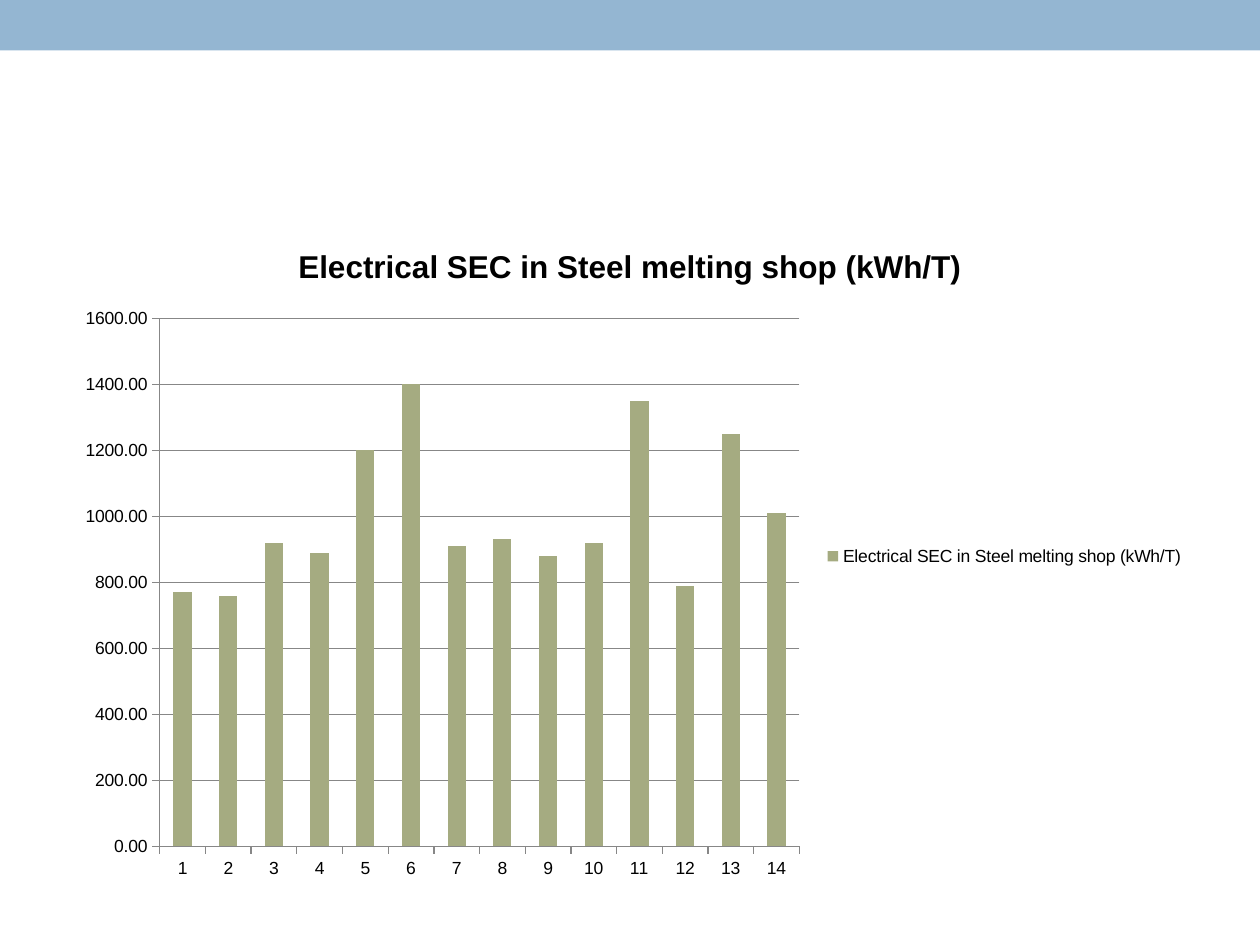
from pptx import Presentation
from pptx.chart.data import CategoryChartData
from pptx.dml.color import RGBColor
from pptx.enum import chart as ch, shapes
from pptx.util import Inches, Pt

NAME = "Electrical SEC in Steel melting shop (kWh/T)"
SEC = [770, 760, 920, 890, 1200, 1400, 910, 930, 880, 920, 1350, 790, 1250, 1010]
GREY = "878787"


def rgb(value):
    return RGBColor.from_string(value)


def set_font(font, size, bold=False):
    font.name, font.size, font.bold = "Arial", Pt(size), bold
    font.color.rgb = rgb("000000")


def set_line(line, color):
    line.color.rgb = rgb(color)
    line.width = Pt(0.75)


def add_band(s, x, y, w, h, color):
    sp = s.shapes.add_shape(shapes.MSO_SHAPE.RECTANGLE,
                            Inches(x), Inches(y), Inches(w), Inches(h))
    sp.shadow.inherit = False
    sp.fill.solid()
    sp.fill.fore_color.rgb = rgb(color)
    sp.line.fill.background()


def add_column_chart(s, x, y, w, h, color):
    data = CategoryChartData(number_format="0.00")
    data.categories = [str(i) for i in range(1, len(SEC) + 1)]
    data.add_series(NAME, SEC)
    chart = s.shapes.add_chart(ch.XL_CHART_TYPE.COLUMN_CLUSTERED, Inches(x), Inches(y),
                               Inches(w), Inches(h), data).chart
    set_font(chart.font, 10)

    # Title and legend
    chart.has_title = True
    tf = chart.chart_title.text_frame
    tf.text = NAME
    set_font(tf.paragraphs[0].runs[0].font, 18, bold=True)
    chart.chart_title.include_in_layout = False
    chart.has_legend = True
    chart.legend.position = ch.XL_LEGEND_POSITION.RIGHT
    chart.legend.include_in_layout = False

    # Axes
    for axis in (chart.category_axis, chart.value_axis):
        axis.major_tick_mark = ch.XL_TICK_MARK.OUTSIDE
        set_line(axis.format.line, GREY)
    axis = chart.value_axis
    axis.minimum_scale, axis.maximum_scale, axis.major_unit = 0, 1600, 200
    axis.has_major_gridlines = True
    set_line(axis.major_gridlines.format.line, GREY)
    axis.tick_labels.number_format = "0.00"
    axis.tick_labels.number_format_is_linked = False

    # Columns
    plot = chart.plots[0]
    plot.vary_by_categories = False
    plot.gap_width = 150
    fill = plot.series[0].format.fill
    fill.solid()
    fill.fore_color.rgb = rgb(color)


def main():
    prs = Presentation()
    prs.slide_width, prs.slide_height = Inches(10), Inches(7.5)
    s = prs.slides.add_slide(prs.slide_layouts[6])
    add_band(s, 0, 0, 10, 0.4, "94B6D2")
    add_column_chart(s, 0.5, 1.75, 9, 5.33, "A5AB81")
    prs.save("out.pptx")


if __name__ == "__main__":
    main()
